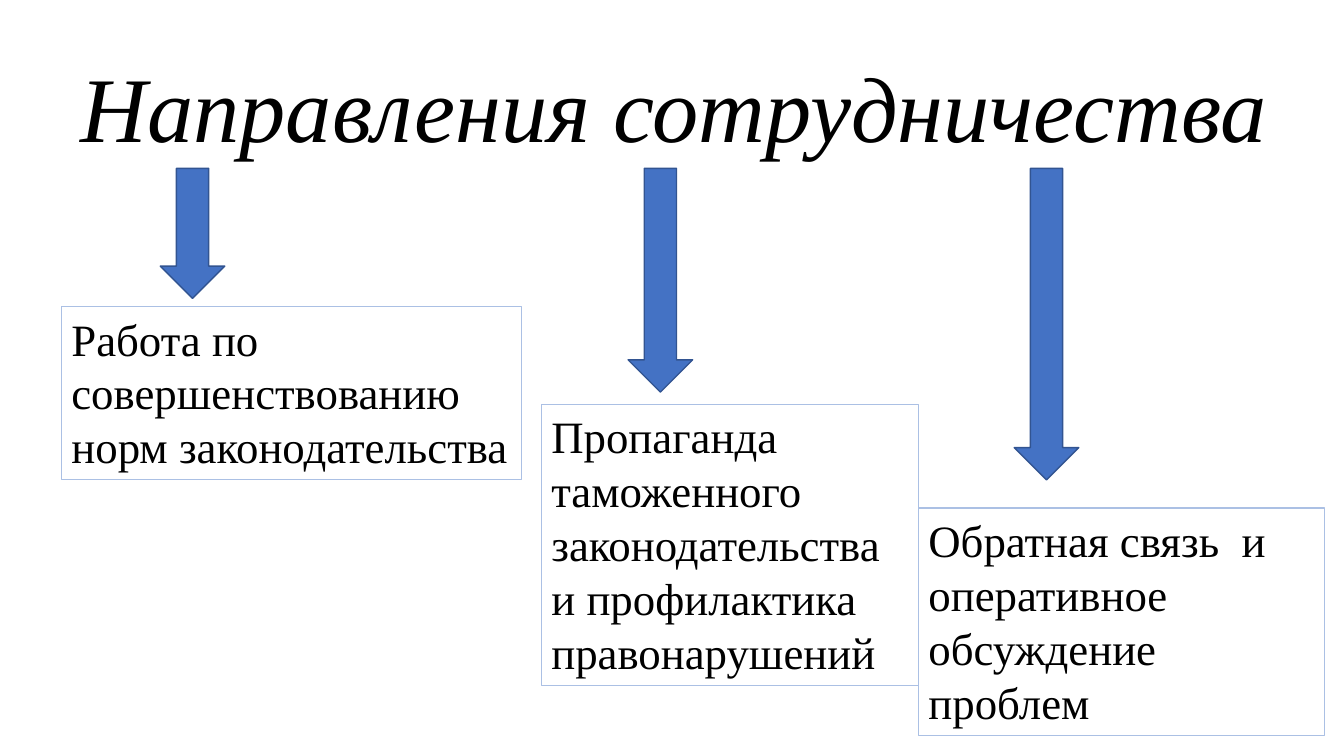
from pptx import Presentation
from pptx.dml.color import RGBColor
from pptx.enum.shapes import MSO_SHAPE
from pptx.enum.text import MSO_ANCHOR, PP_ALIGN
from pptx.util import Inches, Pt

COLORS = {"text": "000000", "arrow": "4472C4", "arrow_line": "325491", "box_line": "ABC0E4"}
FONT = "Times New Roman"
ARROW_TOP, ARROW_WIDTH = 1.67, 0.64

# Text, box (left, top, width, height), arrow left and arrow height
DIRECTIONS = [
    ("Работа по совершенствованию норм законодательства",
     (0.61, 3.04, 4.56, 1.72), 1.59, 1.29),
    ("Пропаганда таможенного законодательства и профилактика правонарушений",
     (5.37, 4.01, 3.74, 2.79), 6.23, 2.22),
    ("Обратная связь  и оперативное обсуждение проблем",
     (9.11, 5.04, 4.03, 2.26), 10.06, 3.09),
]


def color(name):
    return RGBColor.from_string(COLORS[name])


def write(shape, text, size, italic=False):
    frame = shape.text_frame
    frame.word_wrap = True
    frame.vertical_anchor = MSO_ANCHOR.TOP
    para = frame.paragraphs[0]
    para.alignment = PP_ALIGN.LEFT
    span = para.add_run()
    span.text = text
    span.font.name = FONT
    span.font.size = Pt(size)
    span.font.italic = italic
    span.font.color.rgb = color("text")


def add_outlined(page, kind, box, line, width):
    """Add a shadowless preset shape with a coloured outline."""
    shape = page.shapes.add_shape(kind, *map(Inches, box))
    shape.shadow.inherit = False
    shape.line.color.rgb = color(line)
    shape.line.width = Pt(width)
    return shape


def add_title(page, box, text):
    write(page.shapes.add_textbox(*map(Inches, box)), text, 66, italic=True)


def add_arrow(page, box):
    arrow = add_outlined(page, MSO_SHAPE.DOWN_ARROW, box, "arrow_line", 1)
    arrow.fill.solid()
    arrow.fill.fore_color.rgb = color("arrow")


def add_direction(page, box, text):
    card = add_outlined(page, MSO_SHAPE.RECTANGLE, box, "box_line", 0.75)
    card.fill.background()
    write(card, text, 32)


def main():
    deck = Presentation()
    deck.slide_width, deck.slide_height = Inches(13.33), Inches(7.5)
    page = deck.slides.add_slide(deck.slide_layouts[6])
    add_title(page, (0.7, 0.45, 12.22, 1.21), "Направления сотрудничества")
    for text, box, arrow_left, arrow_height in DIRECTIONS:
        add_arrow(page, (arrow_left, ARROW_TOP, ARROW_WIDTH, arrow_height))
        add_direction(page, box, text)
    deck.save("out.pptx")


if __name__ == "__main__":
    main()
